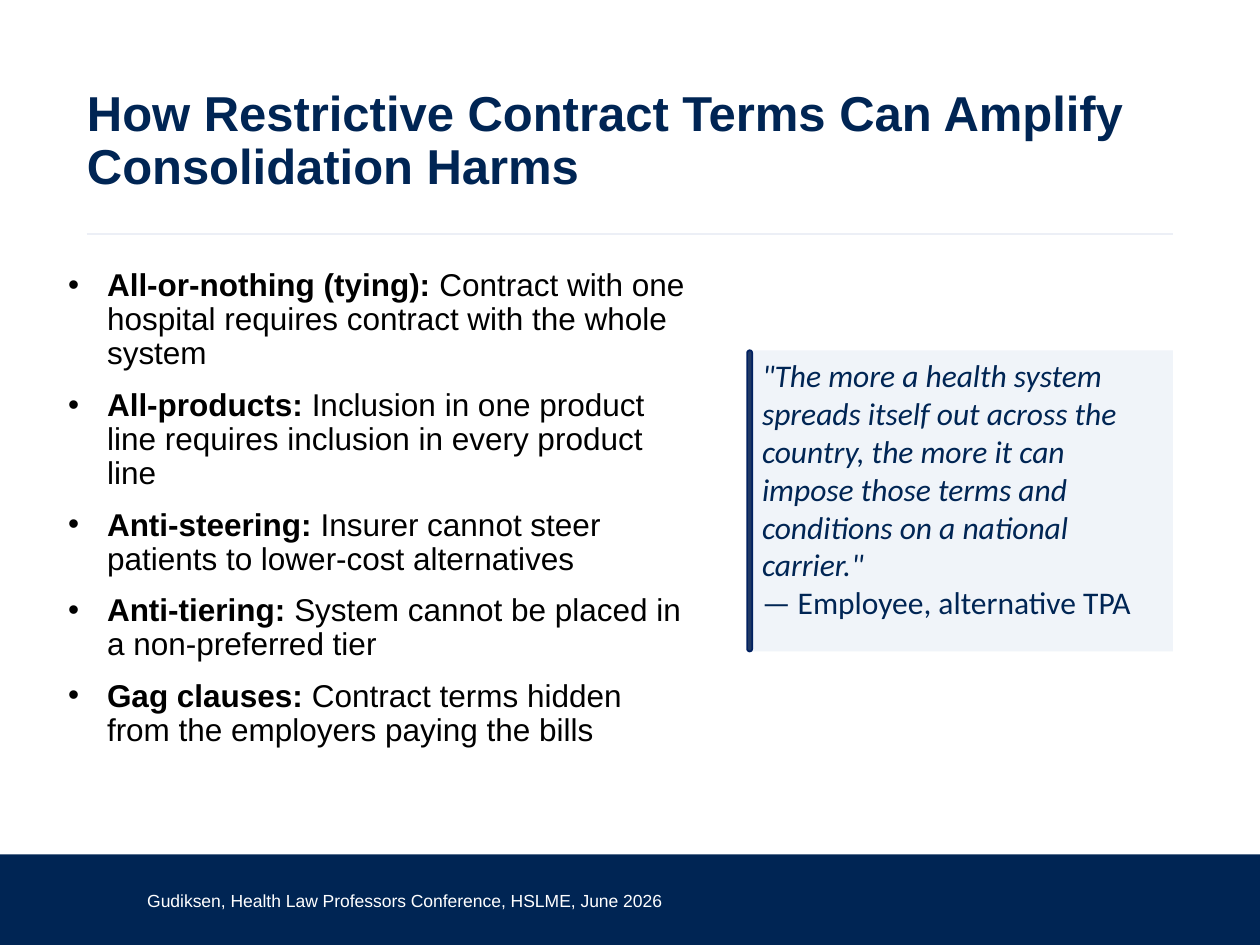
from lxml.etree import SubElement
from pptx import Presentation
from pptx.dml.color import RGBColor
from pptx.enum.shapes import MSO_CONNECTOR as Connector, MSO_SHAPE as Shape
from pptx.enum.text import MSO_ANCHOR as Anchor, PP_ALIGN as Align
from pptx.oxml.ns import qn
from pptx.util import Inches, Pt

COLORS = {
    "navy": "002554",
    "accent": "203864",
    "accent_edge": "002060",
    "panel": "F0F4F9",
    "divider": "ECEFF6",
    "black": "000000",
    "white": "FFFFFF",
}

TITLE = "How Restrictive Contract Terms Can Amplify Consolidation Harms"
TERMS = [
    ("All-or-nothing (tying):", "Contract with one hospital requires contract with the whole system"),
    ("All-products:", "Inclusion in one product line requires inclusion in every product line"),
    ("Anti-steering:", "Insurer cannot steer patients to lower-cost alternatives"),
    ("Anti-tiering:", "System cannot be placed in a non-preferred tier"),
    ("Gag clauses:", "Contract terms hidden from the employers paying the bills"),
]
QUOTE = (
    '"The more a health system spreads itself out across the country, '
    'the more it can impose those terms and conditions on a national carrier."'
)
SPEAKER = "— Employee, alternative TPA"
CITATION = "Gudiksen, Health Law Professors Conference, HSLME, June 2026"


def rgb(name):
    """Return the named palette colour."""
    return RGBColor.from_string(COLORS[name])


def style(paragraph, size, color, face="Arial"):
    """Set the font shared by all runs of a paragraph."""
    font = paragraph.font
    font.size, font.name = Pt(size), face
    font.color.rgb = rgb(color)


def add_block(slide, kind, left, top, width, height, fill):
    """Add a flat filled shape without an outline."""
    block = slide.shapes.add_shape(kind, Inches(left), Inches(top), Inches(width), Inches(height))
    block.shadow.inherit = False
    block.fill.solid()
    block.fill.fore_color.rgb = rgb(fill)
    block.line.fill.background()
    return block


def add_text_frame(slide, left, top, width, height, anchor=Anchor.TOP):
    """Add a wrapping text box and return its text frame."""
    box = slide.shapes.add_textbox(Inches(left), Inches(top), Inches(width), Inches(height))
    frame = box.text_frame
    frame.word_wrap = True
    frame.vertical_anchor = anchor
    return frame


def add_header(slide, left, top, width, height):
    """Place the title with a divider along its lower edge."""
    frame = add_text_frame(slide, left, top, width, height, Anchor.MIDDLE)
    frame.margin_left = frame.margin_right = 0
    title = frame.paragraphs[0]
    title.text = TITLE
    title.line_spacing = 0.9
    style(title, 28, "navy")
    title.font.bold = True

    bottom = Inches(top + height)
    divider = slide.shapes.add_connector(
        Connector.STRAIGHT, Inches(left), bottom, Inches(left + width), bottom
    )
    divider.line.color.rgb = rgb("divider")
    divider.line.width = Pt(1)
    SubElement(divider._element.spPr, qn("a:effectLst"))


def add_terms(slide, left, top, width, height):
    """Place the bulleted contract terms."""
    frame = add_text_frame(slide, left, top, width, height)
    frame.margin_left = frame.margin_right = frame.margin_top = 0
    for index, (term, meaning) in enumerate(TERMS):
        item = frame.add_paragraph() if index else frame.paragraphs[0]
        item.line_spacing = 0.9
        item.space_before = Pt(10 if index else 0)
        properties = item._p.get_or_add_pPr()
        properties.set("marL", str(Inches(0.31)))
        properties.set("indent", str(-Inches(0.31)))
        SubElement(properties, qn("a:buFont"), typeface="Arial")
        SubElement(properties, qn("a:buChar"), char="•")
        style(item, 18, "black")
        lead = item.add_run()
        lead.text = term
        lead.font.bold = True
        item.add_run().text = f" {meaning}"


def add_quote(slide, left, top, width, height):
    """Place the quotation panel with its accent bar."""
    panel = add_block(slide, Shape.RECTANGLE, left, top, width, height, "panel")
    frame = panel.text_frame
    frame.word_wrap = True
    frame.vertical_anchor = Anchor.TOP
    quote, speaker = frame.paragraphs[0], frame.add_paragraph()
    for paragraph, words in ((quote, QUOTE), (speaker, SPEAKER)):
        paragraph.text = words
        paragraph.alignment = Align.LEFT
        style(paragraph, 18, "navy", "Calibri")
    quote.font.italic = True

    accent = add_block(slide, Shape.ROUNDED_RECTANGLE, left - 0.02, top, 0.04, height, "accent")
    accent.adjustments[0] = 0.5
    accent.line.color.rgb = rgb("accent_edge")
    accent.line.width = Pt(1)


def add_footer(slide, left, top, width, height):
    """Place the footer band and its citation."""
    add_block(slide, Shape.RECTANGLE, left, top, width, height, "navy")
    frame = add_text_frame(slide, left + 1.07, top + 0.17, 5.15, 0.4, Anchor.MIDDLE)
    citation = frame.paragraphs[0]
    citation.text = CITATION
    style(citation, 10, "white")


def main():
    """Build and save the slide."""
    deck = Presentation()
    deck.slide_width, deck.slide_height = Inches(10), Inches(7.5)
    slide = deck.slides.add_slide(deck.slide_layouts[6])
    add_footer(slide, 0, 6.78, 10, 0.72)
    add_header(slide, 0.69, 0.4, 8.62, 1.46)
    add_terms(slide, 0.54, 2.14, 4.93, 4.14)
    add_quote(slide, 5.95, 2.78, 3.36, 2.39)
    deck.save("out.pptx")


if __name__ == "__main__":
    main()
